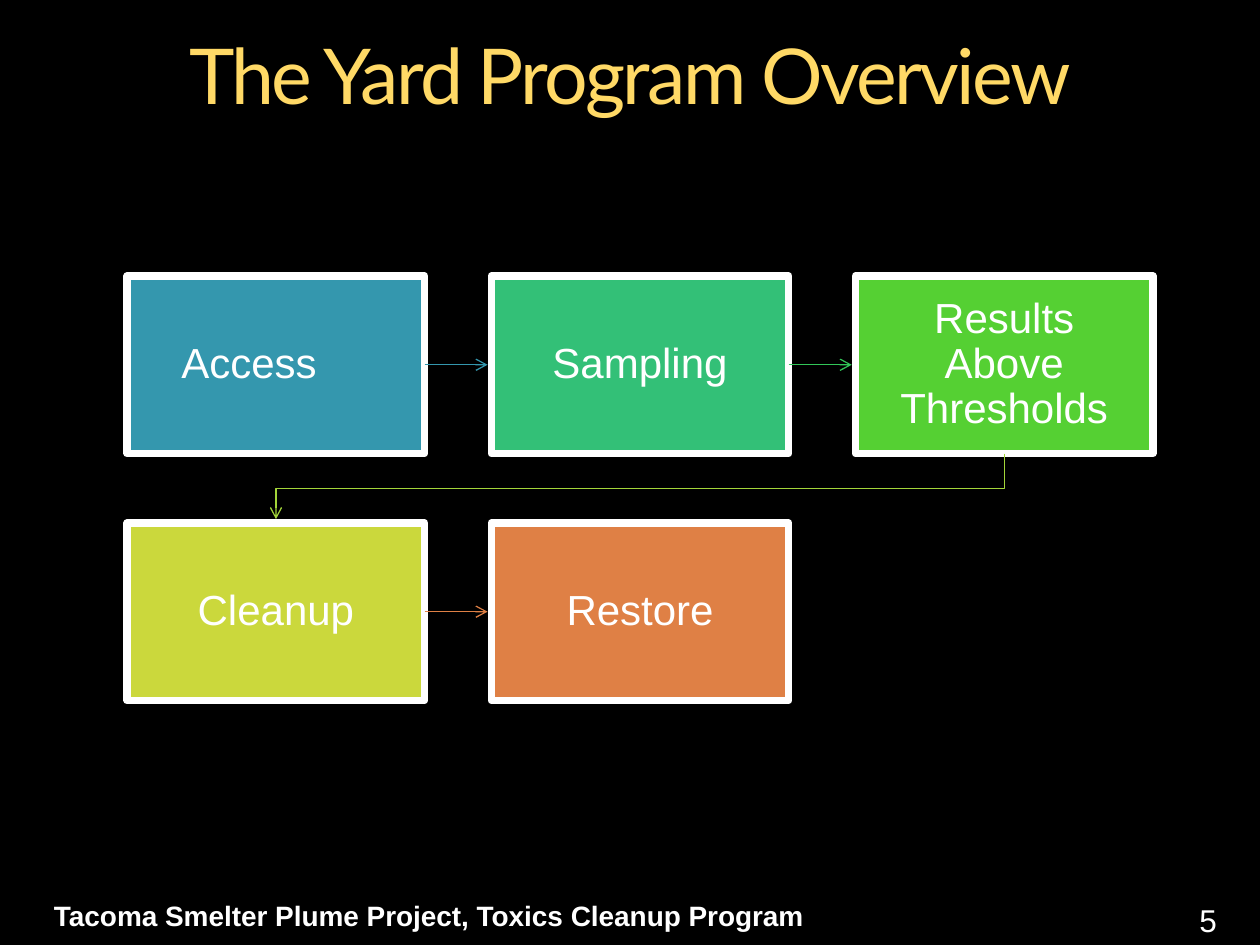
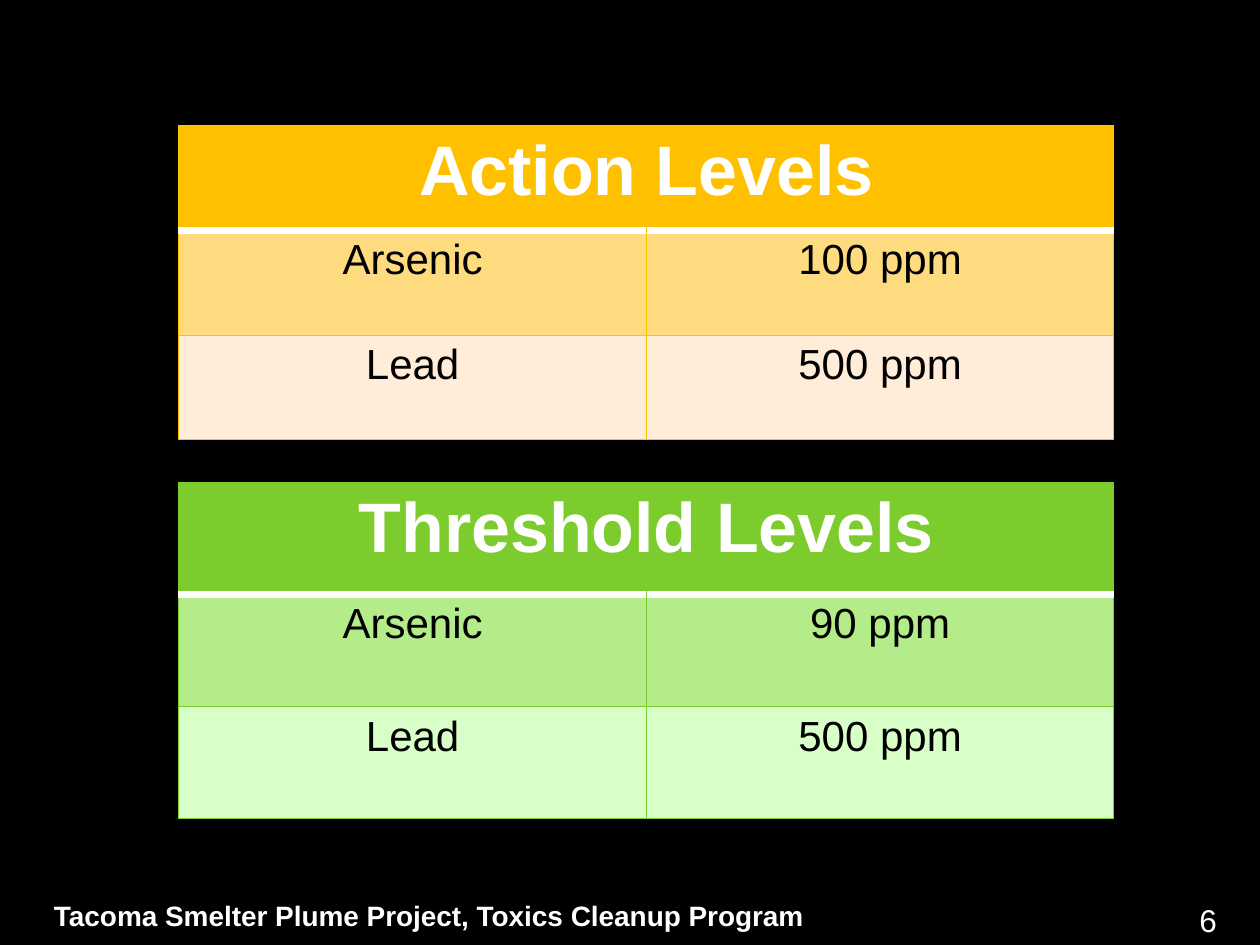
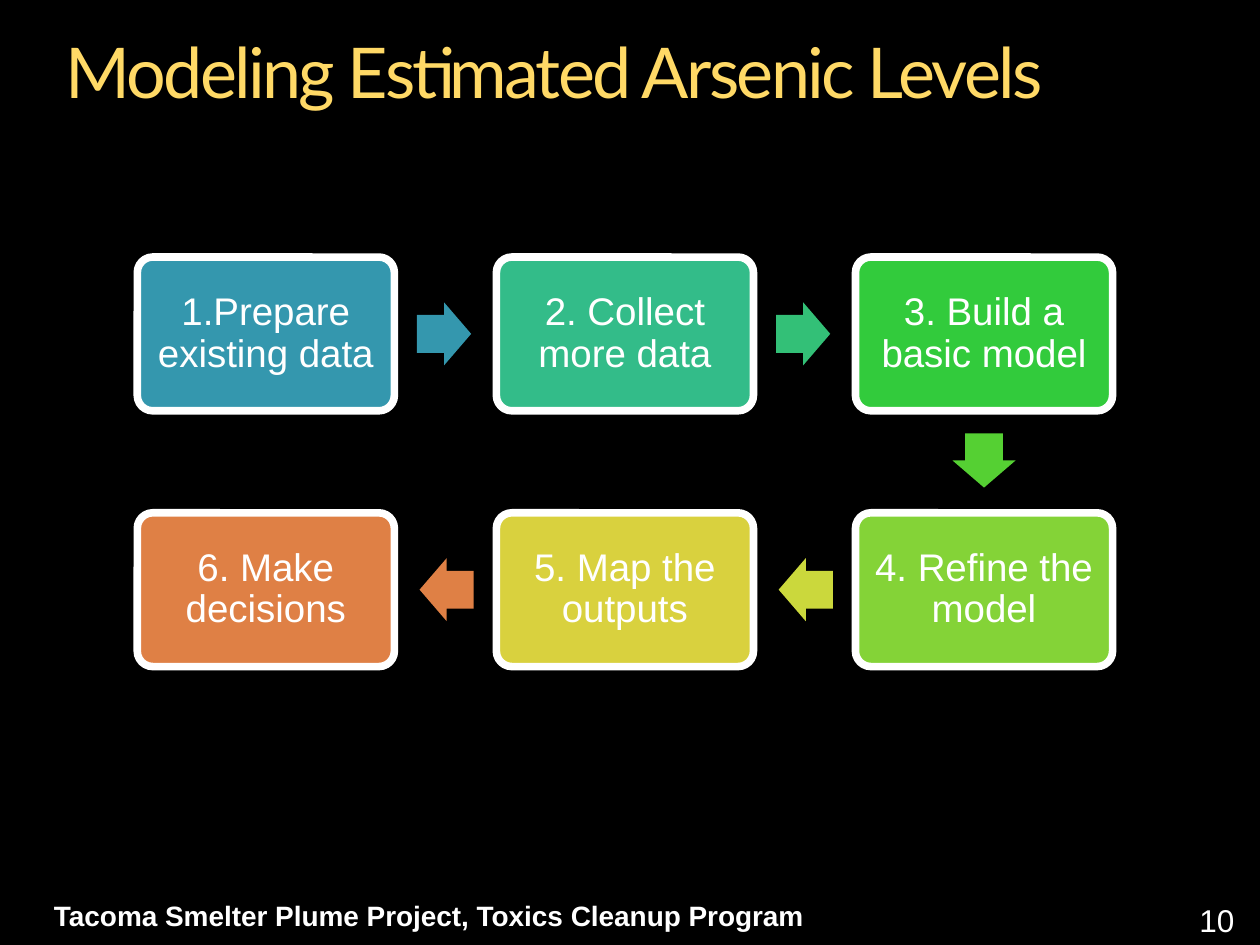
from math import atan2, degrees
from itertools import pairwise

from lxml.etree import SubElement
from pptx import Presentation
from pptx.dml.color import RGBColor
from pptx.enum.shapes import MSO_CONNECTOR as Connector, MSO_SHAPE as Preset
from pptx.enum.text import MSO_ANCHOR as Anchor, MSO_AUTO_SIZE as AutoSize, PP_ALIGN as Align
from pptx.oxml.ns import qn
from pptx.util import Inches, Pt

BLACK, WHITE, GOLD = "000000", "FFFFFF", "FFD966"
FOOTER = "Tacoma Smelter Plume Project, Toxics Cleanup Program"
HEAVY, THIN = 4.33, 0.75

OVERVIEW = {
    "title": "The Yard Program Overview",
    "steps": [
        ("Access\t", "3497AE", (0, 0)),
        ("Sampling", "33C077", (1, 0)),
        ("Results Above Thresholds", "55D033", (2, 0)),
        ("Cleanup", "CBD83C", (0, 1)),
        ("Restore", "DF8045", (1, 1)),
    ],
    "links": ["3497AE", "32C658", "A3D539", "DF8045"],
}
LEVELS = [
    {
        "top": 1, "row": 0.83, "accent": "FFC000", "bands": ["FFDB80", "FFECD9"],
        "heading": "Action Levels",
        "rows": [("Arsenic", "100 ppm"), ("Lead", "500 ppm")],
    },
    {
        "top": 3.83, "row": 0.89, "accent": "7DCC2E", "bands": ["B3EC89", "D8FFC8"],
        "heading": "Threshold Levels",
        "rows": [("Arsenic", "90 ppm"), ("Lead", "500 ppm")],
    },
]
MODELING = {
    "title": "Modeling Estimated Arsenic Levels",
    "steps": [
        ("1.Prepare existing data", "3497AE", (0, 0)),
        ("2. Collect more data", "33BC89", (1, 0)),
        ("3. Build a basic model", "32CB3C", (2, 0)),
        ("4. Refine the model", "84D337", (2, 1)),
        ("5. Map the outputs", "D9D13E", (1, 1)),
        ("6. Make decisions", "DF8045", (0, 1)),
    ],
    "arrows": ["3497AE", "33C077", "55D033", "CBD83C", "DF8045"],
}


def rgb(value):
    """Turn a hex string into a colour."""
    return RGBColor.from_string(value)


def write(frame, text, size, color=WHITE, font="Arial", bold=False, align=Align.LEFT, spacing=None):
    """Write one formatted run into the first paragraph of a frame."""
    para = frame.paragraphs[0]
    para.alignment = align
    para.line_spacing = spacing
    span = para.add_run()
    span.text = text
    span.font.name, span.font.size, span.font.bold = font, Pt(size), bold
    span.font.color.rgb = rgb(color)
    return span


def add_label(page, left, top, width, height, text, size, bold=False):
    """Add a wrapped text box."""
    box = page.shapes.add_textbox(Inches(left), Inches(top), Inches(width), Inches(height))
    box.text_frame.word_wrap = True
    write(box.text_frame, text, size, bold=bold)


def add_page(deck, number, title=None, size=44, left=0, align=Align.CENTER):
    """Add a slide with its footer, page number and optional title."""
    page = deck.slides.add_slide(deck.slide_layouts[5 if title else 6])
    if title:
        holder = page.shapes.title
        holder.left, holder.top = Inches(left), Inches(0.25)
        holder.width, holder.height = Inches(10 - 2 * left), Inches(0.73)
        frame = holder.text_frame
        frame.auto_size, frame.vertical_anchor = AutoSize.NONE, Anchor.TOP
        span = write(frame, title, size, GOLD, "Lato", align=align, spacing=0.9)
        span.font.element.set("spc", "-150") if hasattr(span.font, "element") else \
            span._r.get_or_add_rPr().set("spc", "-150")
    add_label(page, 9.42, 7.1, 0.58, 0.4, str(number), 18)
    add_label(page, 0.33, 7.08, 6.92, 0.37, FOOTER, 16, bold=True)
    return page


def add_block(page, preset, left, top, width, height, color):
    """Add a flat filled preset shape without an outline."""
    block = page.shapes.add_shape(preset, Inches(left), Inches(top), Inches(width), Inches(height))
    block.shadow.inherit = False
    block.fill.solid()
    block.fill.fore_color.rgb = rgb(color)
    block.line.fill.background()
    return block


def add_step(page, preset, place, size, color, text, points, inset):
    """Add a white-framed process step with centred text."""
    step = add_block(page, preset, *place, *size, color)
    step.line.color.rgb = rgb(WHITE)
    step.line.width = Pt(HEAVY)
    frame = step.text_frame
    frame.word_wrap, frame.vertical_anchor = True, Anchor.MIDDLE
    frame.margin_left = frame.margin_right = frame.margin_top = frame.margin_bottom = Inches(inset)
    write(frame, text, points, align=Align.CENTER, spacing=0.9)
    return step


def style_link(link, color):
    """Make a line thin, flat and pointed at its end."""
    link.line.color.rgb = rgb(color)
    link.line.width = Pt(THIN)
    properties = link.element.spPr
    SubElement(properties.find(qn("a:ln")), qn("a:tailEnd"), type="arrow")
    SubElement(properties, qn("a:effectLst"))


def add_overview(deck):
    """Build the five-step program flow."""
    page = add_page(deck, 5, OVERVIEW["title"])
    width, height, gap = 2.36, 1.41, 0.03
    places = []
    for text, color, (column, row) in OVERVIEW["steps"]:
        place = (1.01 + 2.89 * column, 2.19 + 1.96 * row)
        places.append(place)
        add_step(page, Preset.RECTANGLE, place, (width, height), color, text, 24, 0.19)
    for ((x1, y1), (x2, y2)), color in zip(pairwise(places), OVERVIEW["links"]):
        if y1 == y2:
            middle = Inches(y1 + height / 2)
            link = page.shapes.add_connector(
                Connector.STRAIGHT, Inches(x1 + width), middle, Inches(x2 - gap), middle)
        else:
            start, end = x1 + width / 2, x2 + width / 2
            bottom = y1 + height
            bend = (bottom + y2) / 2
            corners = [(start, bend), (end, bend), (end, y2 - gap)]
            outline = page.shapes.build_freeform(Inches(start), Inches(bottom))
            outline.add_line_segments([(Inches(x), Inches(y)) for x, y in corners], close=False)
            link = outline.convert_to_shape()
            link.fill.background()
        style_link(link, color)


def set_borders(cell, borders):
    """Set the four cell borders from (side, colour, points) entries."""
    properties = cell._tc.get_or_add_tcPr()
    for side, color, points in borders:
        line = SubElement(properties, qn(f"a:ln{side}"), w=str(Pt(points)))
        SubElement(SubElement(line, qn("a:solidFill")), qn("a:srgbClr"), val=color)


def add_levels(page, top, row, accent, bands, heading, rows):
    """Add one table with a merged heading over two tinted rows."""
    count = len(rows) + 1
    table = page.shapes.add_table(
        count, 2, Inches(1.42), Inches(top), Inches(7.42), Inches(row * count)).table
    table.first_row = table.horz_banding = False
    table.cell(0, 0).merge(table.cell(0, 1))
    edge, rule = (accent, THIN), (WHITE, HEAVY)
    for index, (texts, fill) in enumerate(zip([(heading, ""), *rows], [accent, *bands])):
        table.rows[index].height = Inches(row)
        above, below = rule if index == 1 else edge, rule if index == 0 else edge
        for column, text in enumerate(texts):
            cell = table.cell(index, column)
            set_borders(cell, [("L", *edge), ("R", *edge), ("T", *above), ("B", *below)])
            cell.fill.solid()
            cell.fill.fore_color.rgb = rgb(fill)
            if text:
                size, color = (24, BLACK) if index else (40, WHITE)
                write(cell.text_frame, text, size, color, bold=index == 0, align=Align.CENTER)


def add_modeling(deck):
    """Build the six-step modeling loop with block arrows."""
    page = add_page(deck, 10, MODELING["title"], size=40, left=0.42, align=Align.LEFT)
    width, height = 2.04, 1.22
    arrow_width, arrow_height, lag = 0.43, 0.5, 0.01
    centers = []
    for text, color, (column, row) in MODELING["steps"]:
        left, top = 1.09 + 2.85 * column, 2.04 + 2.03 * row
        centers.append((left + width / 2, top + height / 2))
        step = add_step(page, Preset.ROUNDED_RECTANGLE, (left, top), (width, height),
                        color, text, 22, 0.05)
        step.adjustments[0] = 0.1
    for ((x1, y1), (x2, y2)), color in zip(pairwise(centers), MODELING["arrows"]):
        angle = round(degrees(atan2(y2 - y1, x2 - x1)))
        across, down = (x2 > x1) - (x2 < x1), (y2 > y1) - (y2 < y1)
        x, y = (x1 + x2) / 2 - lag * across, (y1 + y2) / 2 - lag * down
        arrow = add_block(page, Preset.RIGHT_ARROW, x - arrow_width / 2, y - arrow_height / 2,
                          arrow_width, arrow_height, color)
        arrow.adjustments[0], arrow.adjustments[1] = 0.6, 0.5
        arrow.rotation = angle


def main():
    """Build and save the deck."""
    deck = Presentation()
    deck.slide_width, deck.slide_height = Inches(10), Inches(7.5)
    backdrop = deck.slide_master.background.fill
    backdrop.solid()
    backdrop.fore_color.rgb = rgb(BLACK)
    add_overview(deck)
    page = add_page(deck, 6)
    for levels in LEVELS:
        add_levels(page, **levels)
    add_modeling(deck)
    deck.save("out.pptx")


if __name__ == "__main__":
    main()
